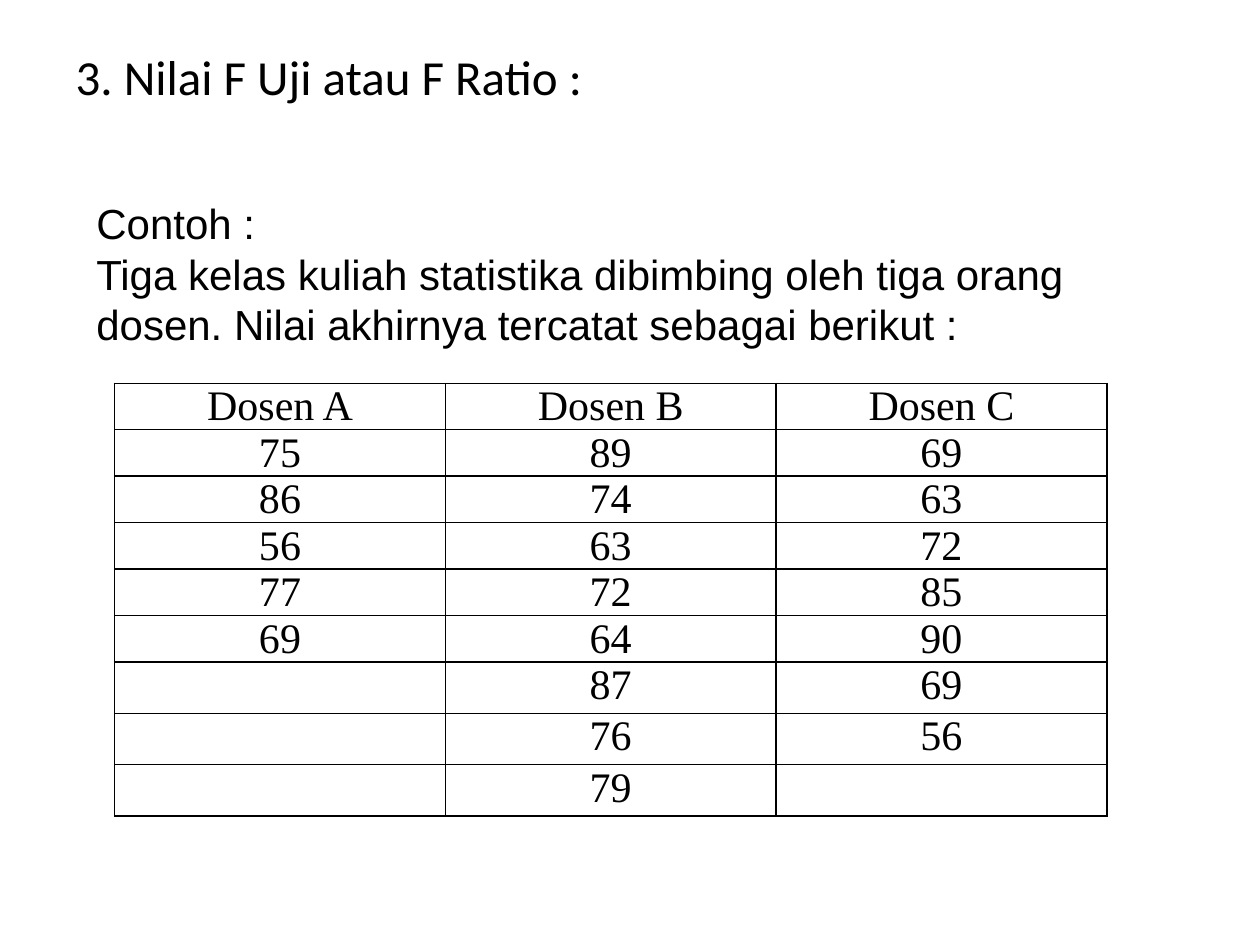
import pptx
import pptx.util
import pptx.dml.color
import pptx.enum.text
from lxml import etree

Pt = pptx.util.Pt
ALIGN = pptx.enum.text.PP_ALIGN
ANCHOR = pptx.enum.text.MSO_ANCHOR

# Content
HEADING = "3. Nilai F Uji atau F Ratio :"
EXAMPLE = [
    "Contoh :",
    "Tiga kelas kuliah statistika dibimbing oleh tiga orang dosen. "
    "Nilai akhirnya tercatat sebagai berikut :",
]
SCORES = {
    "Dosen A": [75, 86, 56, 77, 69],
    "Dosen B": [89, 74, 63, 72, 64, 87, 76, 79],
    "Dosen C": [69, 63, 72, 85, 90, 69, 56],
}

# Look and layout, lengths in points
THEME = {
    "ink": "000000",
    "border": 1,
    "heading": {"name": "Calibri", "size": Pt(28)},
    "example": {"name": "Arial", "size": Pt(24)},
    "scores": {"name": "Times New Roman", "size": Pt(24)},
}
HEADING_BOX = (36, 15, 648, 57)
EXAMPLE_BOX = (48, 106.5, 595.5, 124)
TABLE_LEFT, TABLE_TOP = 65.5, 219
COLUMN_WIDTH, ROW_HEIGHT = 189, 26.57


def apply(target, values):
    for attribute, value in values.items():
        setattr(target, attribute, value)


def write(paragraph, text, role, alignment=ALIGN.LEFT):
    paragraph.alignment = alignment
    paragraph.font.size = THEME[role]["size"]
    if text:
        run = paragraph.add_run()
        run.text = text
        apply(run.font, THEME[role])
        run.font.color.rgb = pptx.dml.color.RGBColor.from_string(THEME["ink"])


def add_borders(cell):
    ns = "http://schemas.openxmlformats.org/drawingml/2006/main"
    properties = cell._tc.get_or_add_tcPr()
    for index, side in enumerate(("lnL", "lnR", "lnT", "lnB")):
        line = etree.Element(f"{{{ns}}}{side}", w=str(Pt(THEME["border"])))
        fill = etree.SubElement(line, f"{{{ns}}}solidFill")
        etree.SubElement(fill, f"{{{ns}}}srgbClr", val=THEME["ink"])
        properties.insert(index, line)


def add_heading(slide):
    heading = slide.shapes.title
    apply(heading, dict(zip(("left", "top", "width", "height"), map(Pt, HEADING_BOX))))
    heading.text_frame.vertical_anchor = ANCHOR.MIDDLE
    write(heading.text_frame.paragraphs[0], HEADING, "heading")


def add_example(slide):
    frame = slide.shapes.add_textbox(*map(Pt, EXAMPLE_BOX)).text_frame
    apply(frame, {"word_wrap": True, "vertical_anchor": ANCHOR.TOP, "margin_top": Pt(6.5)})
    for index, text in enumerate(EXAMPLE):
        paragraph = frame.add_paragraph() if index else frame.paragraphs[0]
        write(paragraph, text, "example")


def add_scores(slide):
    row_count = 1 + max(map(len, SCORES.values()))
    table = slide.shapes.add_table(
        row_count, len(SCORES), Pt(TABLE_LEFT), Pt(TABLE_TOP),
        Pt(COLUMN_WIDTH * len(SCORES)), Pt(ROW_HEIGHT * row_count),
    ).table
    apply(table, {"first_row": False, "horz_banding": False})
    margins = {"margin_left": Pt(5), "margin_right": Pt(5), "margin_top": 0, "margin_bottom": 0}
    for column, (lecturer, scores) in enumerate(SCORES.items()):
        entries = [lecturer, *map(str, scores)]
        entries += [""] * (row_count - len(entries))
        for row, entry in enumerate(entries):
            cell = table.cell(row, column)
            apply(cell, margins)
            cell.fill.background()
            add_borders(cell)
            write(cell.text_frame.paragraphs[0], entry, "scores", ALIGN.CENTER)


def main():
    deck = pptx.Presentation()
    apply(deck, {"slide_width": Pt(720), "slide_height": Pt(540)})
    slide = deck.slides.add_slide(deck.slide_layouts[5])  # Title Only
    add_heading(slide)
    add_scores(slide)
    add_example(slide)
    deck.save("out.pptx")


if __name__ == "__main__":
    main()
